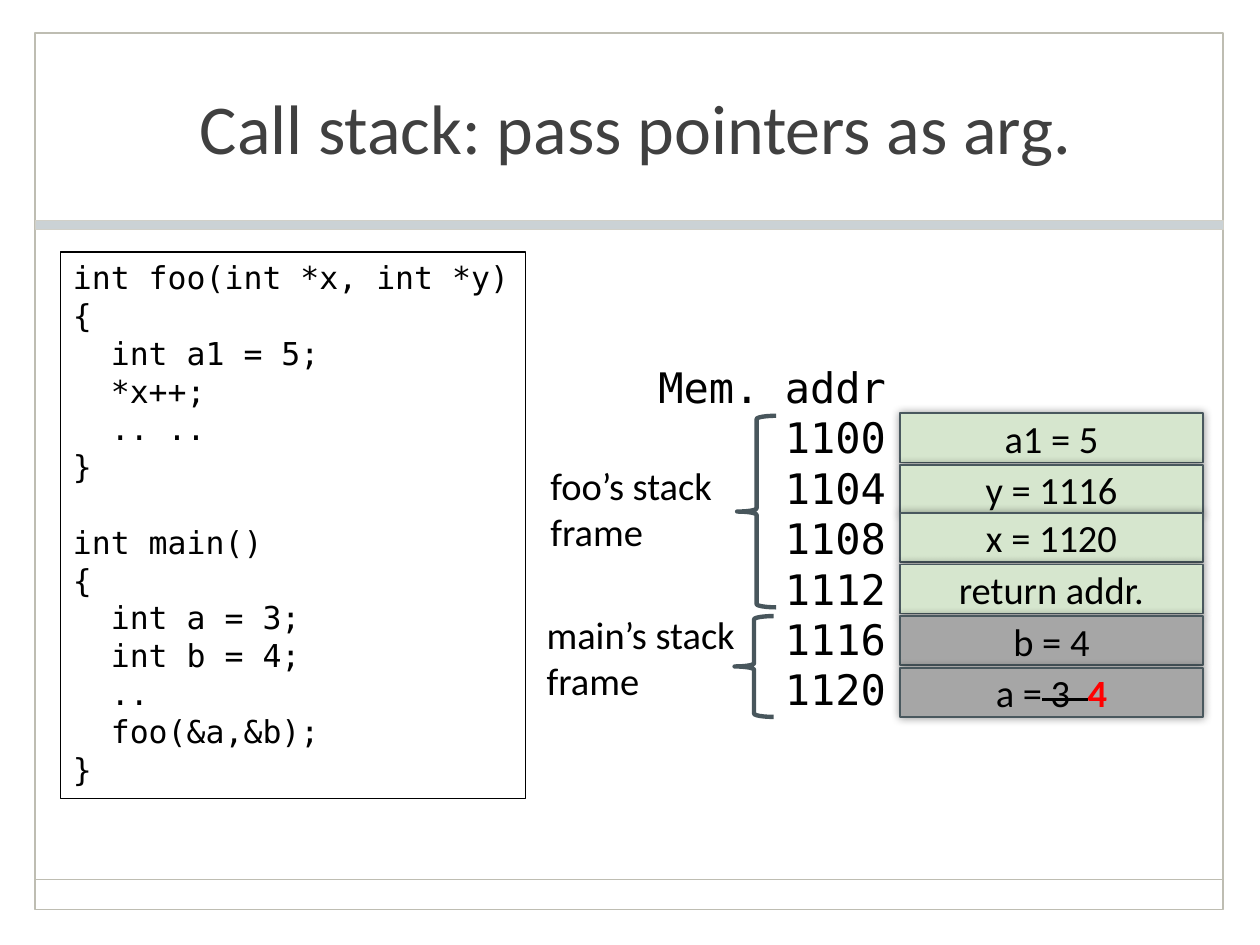
"""Build a slide on passing pointers through the call stack."""
from lxml import etree
from pptx import Presentation
from pptx.dml.color import RGBColor
from pptx.enum.shapes import MSO_CONNECTOR, MSO_SHAPE
from pptx.enum.text import MSO_ANCHOR, PP_ALIGN
from pptx.oxml.ns import qn
from pptx.util import Inches, Pt

RECT, BRACE = MSO_SHAPE.RECTANGLE, MSO_SHAPE.LEFT_BRACE
LINE = MSO_CONNECTOR.STRAIGHT
LEFT, MID, RIGHT = PP_ALIGN.LEFT, PP_ALIGN.CENTER, PP_ALIGN.RIGHT
TOP, CENTER = MSO_ANCHOR.TOP, MSO_ANCHOR.MIDDLE
SANS, MONO = "Calibri", "DejaVu Sans Mono"
COLORS = {
    "ink": "000000", "title": "404040", "frame": "BEBDB2", "band": "CBD2D5",
    "rim": "D1D0C8", "edge": "49585E", "brace": "48565C",
    "foo": "D6E6CE", "main": "A6A6A6", "new": "FF0000",
}
CODE = """int foo(int *x, int *y)
{
  int a1 = 5;
  *x++;
  .. ..
}

int main()
{
  int a = 3;
  int b = 4;
  ..
  foo(&a,&b);
}"""
CELLS = [
    (3.28, "foo", "a1 = 5"), (3.69, "foo", "y = 1116"),
    (4.07, "foo", "x = 1120"), (4.48, "foo", "return addr."),
    (4.89, "main", "b = 4"), (5.3, "main", "a ="),
]
BRACES = [(5.85, 3.3, 0.31, 1.52), (5.83, 4.89, 0.31, 0.8)]
LABELS = [
    ("foo’s stack\nframe", (4.27, 3.62, 1.56, 0.84)),
    ("main’s stack\nframe", (4.24, 4.8, 1.78, 0.84)),
]


class Deck:
    """Hold the style and the current slide."""

    def __init__(self):
        self.prs = Presentation()
        self.prs.slide_width, self.prs.slide_height = Inches(10), Inches(7.5)
        self.slide = self.prs.slides.add_slide(self.prs.slide_layouts[5])
        self.shapes = self.slide.shapes

    def color(self, name):
        return RGBColor.from_string(COLORS[name])

    def label(self, shape, text, size, font=SANS, color="ink",
              align=LEFT, anchor=TOP, wrap=True):
        frame = shape.text_frame
        frame.text = text
        frame.word_wrap = wrap
        frame.vertical_anchor = anchor
        for para in frame.paragraphs:
            para.alignment = align
            para.font.size = Pt(size)
            for run in para.runs:
                self.style(run, size, font, color)

    def style(self, run, size, font=SANS, color="ink"):
        run.font.size, run.font.name = Pt(size), font
        run.font.color.rgb = self.color(color)

    def title(self, text, box):
        shape = self.shapes.title
        shape.left, shape.top, shape.width, shape.height = map(Inches, box)
        self.label(shape, text, 40, color="title", align=MID, anchor=CENTER)

    def shape(self, kind, box, line, width, fill=None):
        shape = self.shapes.add_shape(kind, *map(Inches, box))
        shape.shadow.inherit = False
        shape.line.color.rgb = self.color(line)
        shape.line.width = Pt(width)
        if fill:
            shape.fill.solid()
            shape.fill.fore_color.rgb = self.color(fill)
        else:
            shape.fill.background()
        return shape

    def rule(self, left, right, y, color):
        line = self.shapes.add_connector(
            LINE, Inches(left), Inches(y), Inches(right), Inches(y))
        line.line.color.rgb = self.color(color)
        line.line.width = Pt(1)
        etree.SubElement(line._element.spPr, qn("a:effectLst"))

    def text(self, text, box, size, **look):
        shape = self.shapes.add_textbox(*map(Inches, box))
        self.label(shape, text, size, **look)

    def glow(self, shape):
        effects = shape._element.spPr.find(qn("a:effectLst"))
        shadow = etree.SubElement(effects, qn("a:outerShdw"),
                                  blurRad=str(Pt(5)), dist="0", dir="0")
        tint = etree.SubElement(shadow, qn("a:srgbClr"), val=COLORS["ink"])
        etree.SubElement(tint, qn("a:alpha"), val="40000")

    def cell(self, top, fill, text):
        shape = self.shape(RECT, (7.14, top, 2.41, 0.39), "edge", 1, fill)
        self.glow(shape)
        self.label(shape, text, 22, align=MID, anchor=CENTER)
        return shape

    def change(self, cell, old, new):
        para = cell.text_frame.paragraphs[0]
        gone, now = para.add_run(), para.add_run()
        gone.text, now.text = old, new
        self.style(gone, 22)
        gone._r.get_or_add_rPr().set("strike", "sngStrike")
        self.style(now, 22, color="new")
        now.font.bold = True


def main():
    deck = Deck()
    deck.shape(RECT, (0.28, 0.26, 9.43, 6.96), "frame", 1)
    deck.rule(0.28, 9.71, 6.98, "frame")
    deck.shape(RECT, (0.28, 1.75, 9.43, 0.07), "rim", 0.25, "band")
    deck.title("Call stack: pass pointers as arg.", (0.48, 0.27, 9.13, 1.47))
    code = deck.shape(RECT, (0.48, 2, 3.69, 4.34), "ink", 0.75)
    deck.label(code, CODE, 18, font=MONO, wrap=False)
    cells = [deck.cell(*cell) for cell in CELLS]
    deck.change(cells[-1], " 3  ", "4")
    for box in BRACES:
        deck.shape(BRACE, box, "brace", 2.5)
    for text, box in LABELS:
        deck.text(text, box, 22, wrap=False)
    addrs = [str(addr) for addr in range(1100, 1121, 4)]
    deck.text("\n".join(["Mem. addr"] + addrs), (4.98, 2.82, 2.15, 2.93), 24,
              font=MONO, align=RIGHT)
    deck.prs.save("out.pptx")


if __name__ == "__main__":
    main()
